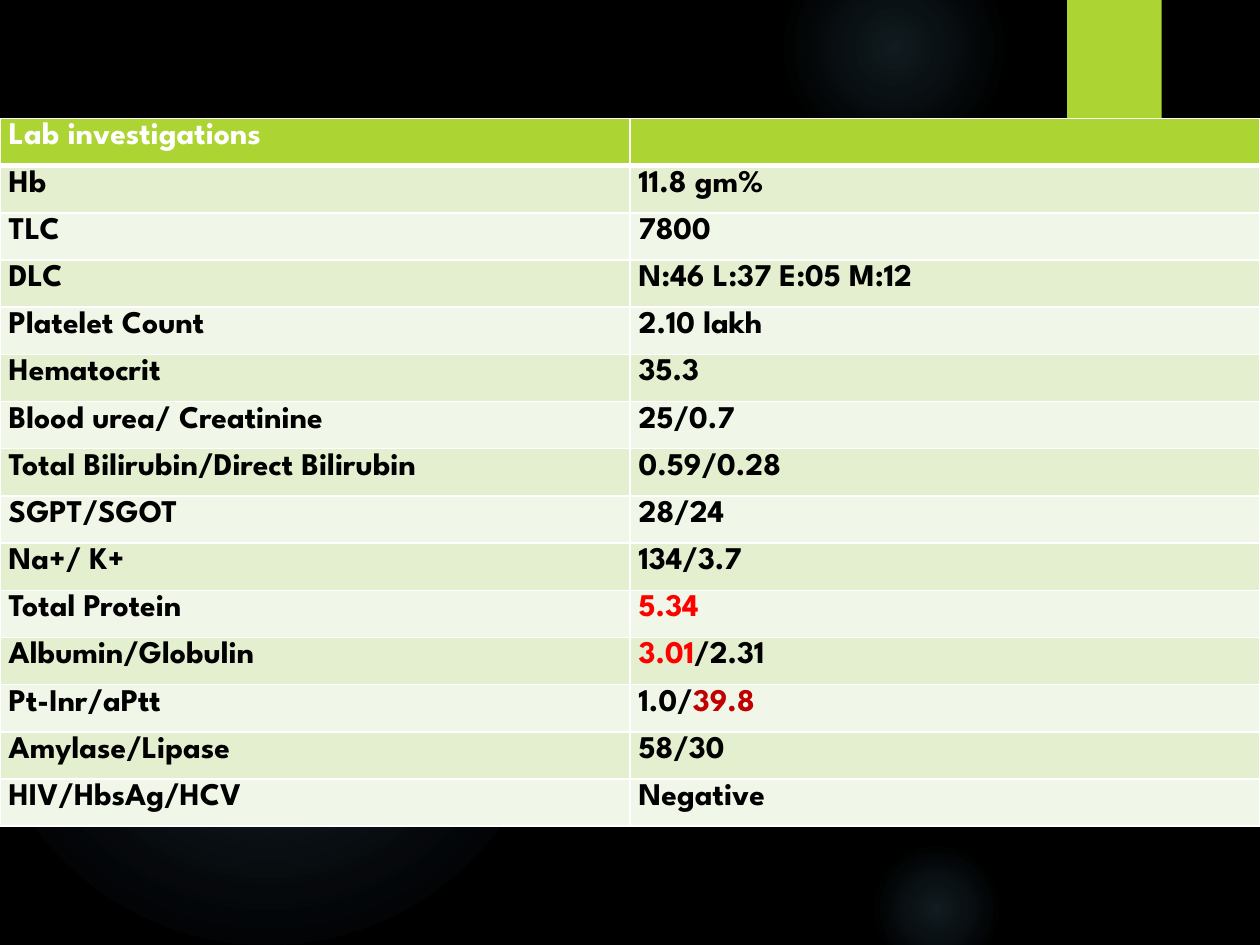
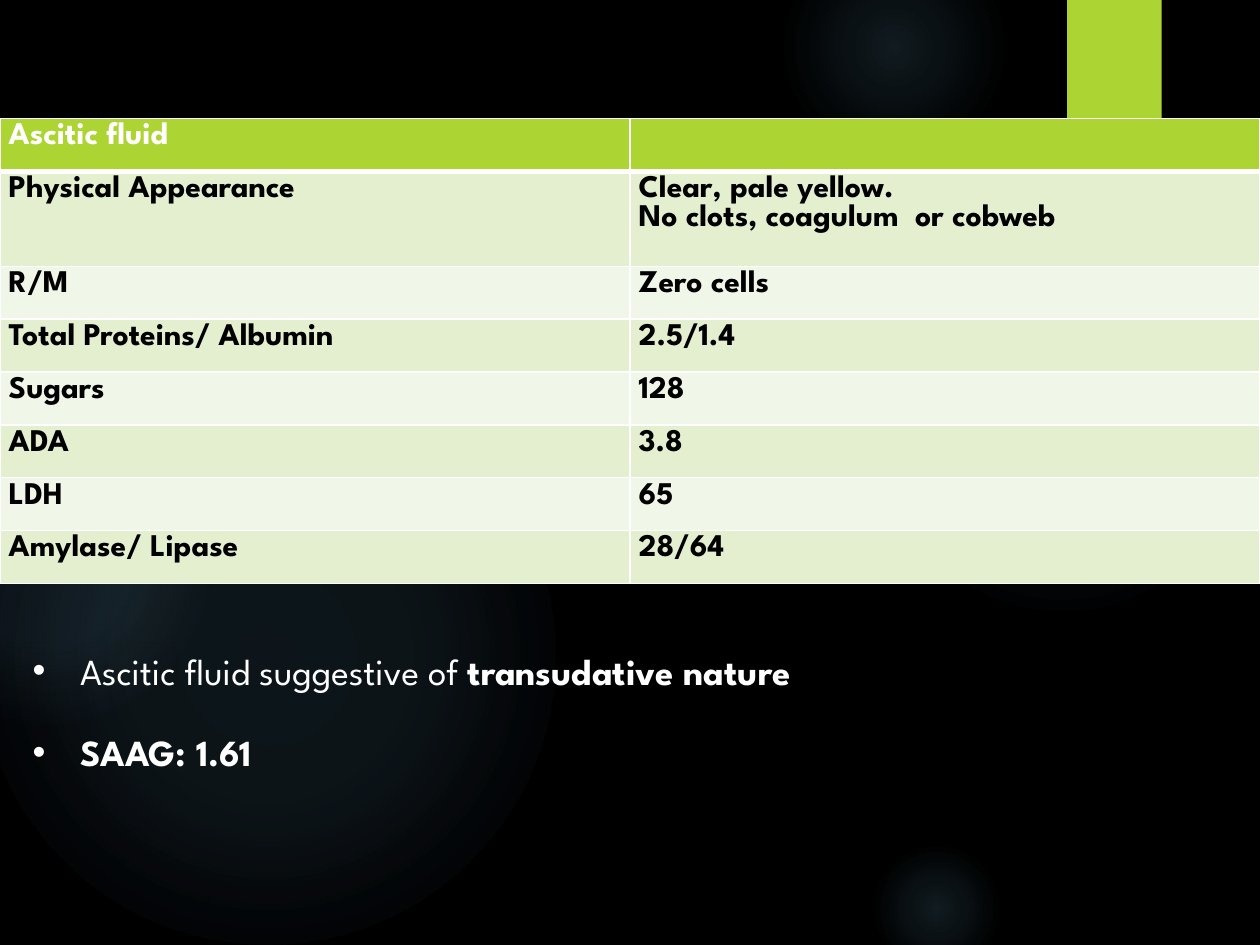
from dataclasses import dataclass

from pptx import Presentation
from pptx.dml.color import RGBColor
from pptx.enum.shapes import MSO_SHAPE
from pptx.enum.text import MSO_ANCHOR, MSO_AUTO_SIZE
from pptx.oxml import parse_xml
from pptx.oxml.ns import nsdecls, qn
from pptx.util import Inches, Pt


@dataclass(frozen=True)
class Theme:
    font: str = "League Spartan"
    background: str = "000000"
    accent: str = "ACD433"
    glow: str = "7AC4F0"
    bands: tuple = ("E3EFCE", "F1F7E8")
    light: str = "FFFFFF"
    dark: str = "000000"
    alert: str = "FF0000"
    alert_deep: str = "C00000"
    table_size: int = 18
    list_size: int = 21


THEME = Theme()
SLIDE_W, SLIDE_H = Inches(10), Inches(7.5)
COL, ROW = SLIDE_W / 100, SLIDE_H / 75
BLANK, TITLE_AND_CONTENT = 6, 1

# left, top, diameter in grid units; (position, opacity) stops in percent
GLOWS = [
    (68.9, 18.3, 30.8, [(0, 7), (36, 6), (69, 0)]),
    (62.2, -5, 17.5, [(0, 14), (36, 7), (73, 0)]),
    (68.9, 66.7, 10.8, [(0, 14), (36, 7), (66, 0)]),
    (-1.7, 29.2, 45.8, [(0, 11), (36, 10), (75, 0)]),
    (-9.2, 31.7, 25.8, [(0, 8), (36, 8), (72, 0)]),
]
TAB_BOX = (84.7, 0, 7.5, 12)
LAB_BOX = (0, 9.4, 100, 56.2)
FLUID_BOX = (0, 9.4, 100, 36.9)
FINDINGS_BOX = (1.6, 49.2, 69.9, 10.9)

LAB_ROWS = [
    ("Lab investigations", ""),
    ("Hb", "11.8 gm%"),
    ("TLC", "7800"),
    ("DLC", "N:46 L:37 E:05 M:12"),
    ("Platelet Count", "2.10 lakh"),
    ("Hematocrit", "35.3"),
    ("Blood urea/ Creatinine", "25/0.7"),
    ("Total Bilirubin/Direct Bilirubin", "0.59/0.28"),
    ("SGPT/SGOT", "28/24"),
    ("Na+/ K+", "134/3.7"),
    ("Total Protein", [("5.34", THEME.alert)]),
    ("Albumin/Globulin", [("3.01", THEME.alert), ("/2.31", THEME.dark)]),
    ("Pt-Inr/aPtt", [("1.0/", THEME.dark), ("39.8", THEME.alert_deep)]),
    ("Amylase/Lipase", "58/30"),
    ("HIV/HbsAg/HCV", "Negative"),
]
FLUID_ROWS = [
    ("Ascitic fluid", ""),
    ("Physical Appearance", "Clear, pale yellow.\nNo clots, coagulum  or cobweb"),
    ("R/M", "Zero cells"),
    ("Total Proteins/ Albumin", "2.5/1.4"),
    ("Sugars", "128"),
    ("ADA", "3.8"),
    ("LDH", "65"),
    ("Amylase/ Lipase", "28/64"),
]
FINDINGS = [
    [("Ascitic fluid suggestive of ", False), ("transudative nature", True)],
    [("SAAG: 1.61", True)],
]


def on_grid(x, y, w, h):
    return round(x * COL), round(y * ROW), round(w * COL), round(h * ROW)


def rgb(color):
    return RGBColor.from_string(color)


def style_run(r, size, color, bold):
    r.font.name, r.font.size, r.font.bold = THEME.font, Pt(size), bold
    r.font.color.rgb = rgb(color)


def glow_fill(stops):
    """Radial gradient that fades out from the centre."""
    gs = "".join(
        f'<a:gs pos="{pos * 1000}"><a:srgbClr val="{THEME.glow}">'
        f'<a:alpha val="{alpha * 1000}"/></a:srgbClr></a:gs>'
        for pos, alpha in stops)
    return parse_xml(
        f'<a:gradFill {nsdecls("a")} rotWithShape="1"><a:gsLst>{gs}</a:gsLst>'
        '<a:path path="circle">'
        '<a:fillToRect l="50000" t="50000" r="50000" b="50000"/>'
        '</a:path></a:gradFill>')


def add_plain_shape(s, kind, box):
    sp = s.shapes.add_shape(kind, *on_grid(*box))
    sp.shadow.inherit = False
    sp.line.fill.background()
    return sp


def add_glow(s, x, y, size, stops):
    sp = add_plain_shape(s, MSO_SHAPE.OVAL, (x, y, size, size))
    sp.fill.background()
    spPr = sp.element.spPr
    spPr.replace(spPr.find(qn("a:noFill")), glow_fill(stops))
    return sp


def add_tab(s):
    sp = add_plain_shape(s, MSO_SHAPE.RECTANGLE, TAB_BOX)
    sp.fill.solid()
    sp.fill.fore_color.rgb = rgb(THEME.accent)
    sp.element.spPr.find(qn("a:effectLst")).append(parse_xml(
        f'<a:outerShdw {nsdecls("a")} blurRad="{Pt(3)}" dist="{Pt(2)}" '
        f'dir="5400000"><a:srgbClr val="{THEME.dark}">'
        '<a:alpha val="45000"/></a:srgbClr></a:outerShdw>'))
    return sp


def build_master(prs, s):
    """Draw the backdrop on slide s, then move it to the master."""
    master = prs.slide_master
    master.background.fill.solid()
    master.background.fill.fore_color.rgb = rgb(THEME.background)
    backdrop = [add_glow(s, *glow) for glow in GLOWS] + [add_tab(s)]
    for shape_id, sp in enumerate(backdrop, start=101):
        sp.element.nvSpPr.cNvPr.id = shape_id
        master.shapes.element.append(sp.element)


def set_borders(cell, widths):
    tcPr = cell.fill and cell._tc.get_or_add_tcPr()
    for i, (side, width) in enumerate(widths.items()):
        tcPr.insert(i, parse_xml(
            f'<a:ln{side} {nsdecls("a")} w="{Pt(width)}"><a:solidFill>'
            f'<a:srgbClr val="{THEME.light}"/></a:solidFill></a:ln{side}>'))


def fill_cell(cell, content, row):
    header = row == 0
    cell.margin_left = cell.margin_right = Pt(5)
    cell.margin_top = cell.margin_bottom = Pt(2.5)
    cell.fill.solid()
    cell.fill.fore_color.rgb = rgb(
        THEME.accent if header else THEME.bands[(row - 1) % 2])
    set_borders(cell, {"L": 1, "R": 1, "T": 3 if row == 1 else 1,
                       "B": 3 if header else 1})
    tf = cell.text_frame
    if isinstance(content, str):
        tf.text = content
        color = THEME.light if header else THEME.dark
        for p in tf.paragraphs:
            for r in p.runs:
                style_run(r, THEME.table_size, color, True)
    else:
        for text, color in content:
            r = tf.paragraphs[0].add_run()
            r.text = text
            style_run(r, THEME.table_size, color, True)


def add_results_table(s, box, rows, row_shares=None):
    """Spread rows over the box; row_shares gives a row more than one share."""
    x, y, w, h = on_grid(*box)
    table = s.shapes.add_table(len(rows), 2, x, y, w, h).table
    shares = [(row_shares or {}).get(i, 1) for i in range(len(rows))]
    for i, (row, share) in enumerate(zip(rows, shares)):
        table.rows[i].height = round(h * share / sum(shares))
        for j, content in enumerate(row):
            fill_cell(table.cell(i, j), content, i)


def add_findings(body, box):
    body.left, body.top, body.width, body.height = on_grid(*box)
    tf = body.text_frame
    tf.word_wrap, tf.auto_size = True, MSO_AUTO_SIZE.NONE
    tf.vertical_anchor = MSO_ANCHOR.TOP
    for i, finding in enumerate(FINDINGS):
        p = tf.add_paragraph() if i else tf.paragraphs[0]
        p.line_spacing, p.space_before = 1.5, Pt(9)
        for text, bold in finding:
            r = p.add_run()
            r.text = text
            style_run(r, THEME.list_size, THEME.light, bold)


def lab_slide(s):
    add_results_table(s, LAB_BOX, LAB_ROWS)


def fluid_slide(s):
    title = s.shapes.title.element
    title.getparent().remove(title)
    add_results_table(s, FLUID_BOX, FLUID_ROWS, {1: 1.8})
    add_findings(s.placeholders[1], FINDINGS_BOX)


def main():
    prs = Presentation()
    prs.slide_width, prs.slide_height = SLIDE_W, SLIDE_H
    lab = prs.slides.add_slide(prs.slide_layouts[BLANK])
    build_master(prs, lab)
    lab_slide(lab)
    fluid_slide(prs.slides.add_slide(prs.slide_layouts[TITLE_AND_CONTENT]))
    prs.save("out.pptx")


if __name__ == "__main__":
    main()
